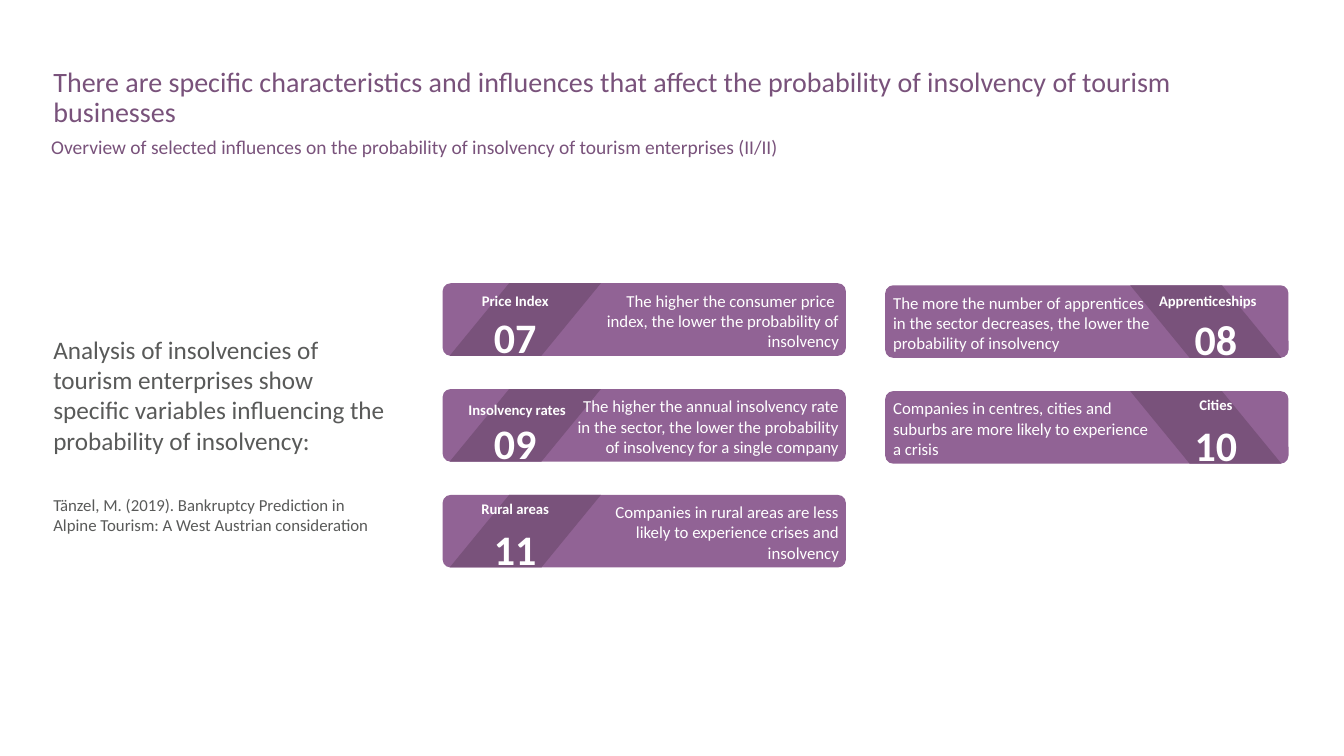
import pptx
import pptx.util
from pptx.dml.color import RGBColor
from pptx.enum.shapes import MSO_SHAPE
from pptx.enum.text import MSO_ANCHOR, MSO_AUTO_SIZE, PP_ALIGN

Inches = pptx.util.Inches
Pt = pptx.util.Pt

COLORS = {"card": "916395", "band": "79527B", "body": "595A59", "white": "FFFFFF"}
FONT = "Calibri"
CARD_WIDTH, CARD_HEIGHT = 4.0, 0.72
ROW_TOP, ROW_PITCH = 2.81, 1.05
LEFT_COLUMN, RIGHT_COLUMN = 4.39, 8.78
RIGHT_COLUMN_DROP = 0.02

# number, heading, heading shift (x, y), text, text width
CARDS = [
    ("07", "Price Index", (0, 0.04),
     "The higher the consumer price \vindex, the lower the probability of insolvency", 2.72),
    ("08", "Apprenticeships", (-0.08, 0.02),
     "The more the number of apprentices in the sector decreases, "
     "the lower the probability of insolvency", 2.8),
    ("09", "Insolvency rates", (0.02, 0.07),
     "The higher the annual insolvency rate in the sector, "
     "the lower the probability of insolvency for a single company", 2.81),
    ("10", "Cities", (0, 0),
     "Companies in centres, cities and suburbs are more likely to experience a crisis", 2.8),
    ("11", "Rural areas", (0, 0),
     "Companies in rural areas are less likely to experience crises and insolvency", 2.72),
]


def rgb(name):
    return RGBColor.from_string(COLORS[name])


def format_paragraph(paragraph, size, color, bold=False, align=PP_ALIGN.LEFT):
    paragraph.alignment = align
    paragraph.font.name = FONT
    paragraph.font.size = Pt(size)
    paragraph.font.bold = bold
    paragraph.font.color.rgb = rgb(color)


def set_frame(frame, anchor=MSO_ANCHOR.TOP, insets=(0.1, 0.05)):
    frame.word_wrap = True
    frame.auto_size = MSO_AUTO_SIZE.NONE
    frame.vertical_anchor = anchor
    frame.margin_left = frame.margin_right = Inches(insets[0])
    frame.margin_top = frame.margin_bottom = Inches(insets[1])


def add_text(slide, box, text, size, color, bold=False, align=PP_ALIGN.LEFT,
             anchor=MSO_ANCHOR.TOP, insets=(0.1, 0.05)):
    """Add a one-paragraph text box and return its text frame."""
    frame = slide.shapes.add_textbox(*map(Inches, box)).text_frame
    set_frame(frame, anchor, insets)
    frame.text = text
    format_paragraph(frame.paragraphs[0], size, color, bold, align)
    return frame


def paint(shape, color):
    shape.shadow.inherit = False
    shape.fill.solid()
    shape.fill.fore_color.rgb = rgb(color)
    shape.line.fill.background()


def add_header(slide, left, top, width):
    title = slide.shapes.title
    title.left, title.top = Inches(left), Inches(top)
    title.width, title.height = Inches(width), Inches(0.64)
    title.text = ("There are specific characteristics and influences that affect "
                  "the probability of insolvency of tourism businesses")
    set_frame(title.text_frame)
    format_paragraph(title.text_frame.paragraphs[0], 20, "band")
    title.text_frame.paragraphs[0].line_spacing = 0.9

    subtitle = add_text(
        slide, (left - 0.02, top + 0.72, width, 0.28),
        "Overview of selected influences on the probability of insolvency "
        "of tourism enterprises (II/II)", 13.9, "band")
    subtitle.paragraphs[0].line_spacing = 0.7


def add_introduction(slide, box):
    frame = add_text(
        slide, box,
        "Analysis of insolvencies of tourism enterprises show specific variables "
        "influencing the probability of insolvency:", 18, "body", anchor=MSO_ANCHOR.MIDDLE)
    citation = frame.add_paragraph()
    citation.text = ("Tänzel, M. (2019). Bankruptcy Prediction in Alpine Tourism: "
                     "A West Austrian consideration")
    citation.space_before = Pt(28)
    format_paragraph(citation, 12, "body")


def add_card(slide, left, top, card, mirrored):
    """Add a card with its slanted band on the left, or on the right if mirrored."""
    number, heading, (shift_x, shift_y), text, text_width = card

    def across(offset):
        return left + (CARD_WIDTH - offset if mirrored else offset)

    body = slide.shapes.add_shape(
        MSO_SHAPE.ROUNDED_RECTANGLE,
        *map(Inches, (left, top, CARD_WIDTH, CARD_HEIGHT)))
    body.adjustments[0] = 0.11
    paint(body, "card")

    bottom = top + CARD_HEIGHT
    corners = [(Inches(across(x)), Inches(y)) for x, y in
               ((1.57, top), (0.66, top), (0.07, bottom), (0.98, bottom))]
    builder = slide.shapes.build_freeform(*corners[0])
    builder.add_line_segments(corners[1:], close=True)
    paint(builder.convert_to_shape(), "band")

    center = across(0.72)
    add_text(slide, (center - 0.67 + shift_x, top + shift_y, 1.34, 0.28), heading,
             10.5, "white", True, PP_ALIGN.CENTER)
    add_text(slide, (center - 0.23, top + 0.28, 0.46, 0.51), number,
             30, "white", True, PP_ALIGN.CENTER, MSO_ANCHOR.MIDDLE, (0, 0))
    text_left = left - 0.02 if mirrored else left + CARD_WIDTH + 0.03 - text_width
    add_text(slide, (text_left, top + 0.02, text_width, 0.71), text, 12, "white",
             align=PP_ALIGN.LEFT if mirrored else PP_ALIGN.RIGHT)


def main():
    presentation = pptx.Presentation()
    presentation.slide_width = Inches(13.33)
    presentation.slide_height = Inches(7.5)
    slide = presentation.slides.add_slide(presentation.slide_layouts.get_by_name("Title Only"))

    add_header(slide, 0.43, 0.63, 12.54)
    add_introduction(slide, (0.43, 1.79, 3.49, 5.04))
    for index, card in enumerate(CARDS):
        row, column = divmod(index, 2)
        add_card(slide, (LEFT_COLUMN, RIGHT_COLUMN)[column],
                 ROW_TOP + row * ROW_PITCH + column * RIGHT_COLUMN_DROP,
                 card, mirrored=column == 1)
    presentation.save("out.pptx")


if __name__ == "__main__":
    main()
